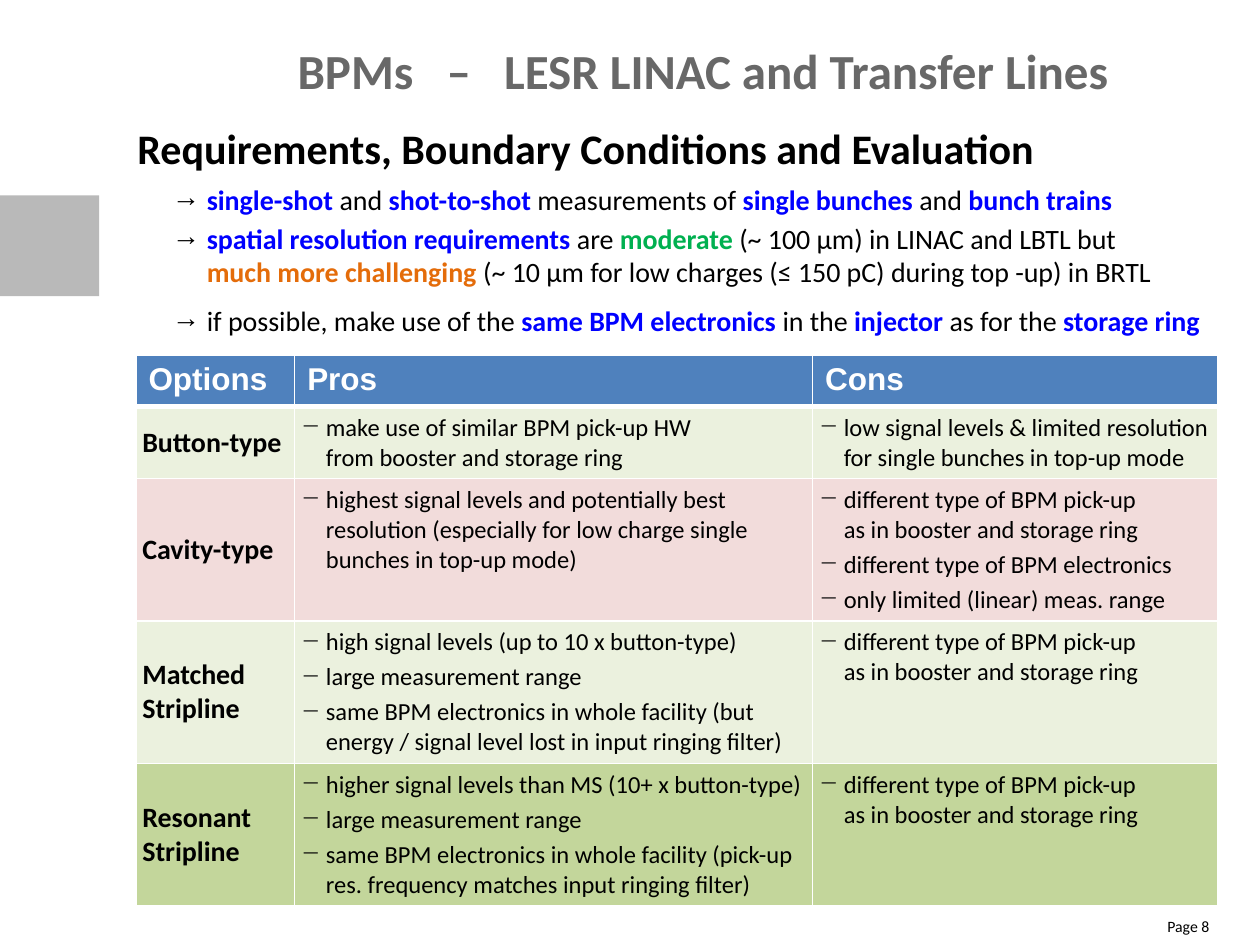
from pptx import Presentation
from pptx.dml.color import RGBColor
from pptx.enum.shapes import MSO_SHAPE as Shape
from pptx.enum.text import MSO_ANCHOR as Anchor, PP_ALIGN as Align
from pptx.oxml.ns import qn
from pptx.util import Cm, Pt
from lxml.etree import SubElement

BLACK, WHITE, GREY, LIGHT_GREY = "000000", "FFFFFF", "686868", "B9B9B9"
BLUE, GREEN, ORANGE = "0000FF", "00B050", "E46C0A"
HEADER, NEUTRAL, POOR, BEST = "4F81BD", "EBF1DE", "F2DCDB", "C3D69B"

TITLE = "BPMs   –   LESR LINAC and Transfer Lines"
HEADING = "Requirements, Boundary Conditions and Evaluation"
ARROW, CONTINUED = "\t→\t", "\t\t"

# lead, line spacing, space after, fragments; a coloured fragment is bold
REQUIREMENTS = [
    (ARROW, 1.3, 3, [("single-shot ", BLUE), ("and", BLACK), (" shot-to-shot ", BLUE),
                     ("measurements of ", BLACK), ("single bunches ", BLUE),
                     ("and ", BLACK), ("bunch trains", BLUE)]),
    (ARROW, 1, 0, [("spatial resolution requirements ", BLUE), ("are ", BLACK),
                   ("moderate ", GREEN), ("(~ 100 µm) in LINAC and LBTL but", BLACK)]),
    (CONTINUED, 1, 3, [("much more challenging", ORANGE),
                       (" (~ 10 µm for low charges (≤ 150 pC) during top -up) in BRTL", BLACK)]),
    (ARROW, 1.3, 6, [("if possible, make use of the ", BLACK), ("same BPM electronics ", BLUE),
                     ("in the ", BLACK), ("injector ", BLUE), ("as for the ", BLACK),
                     ("storage ring", BLUE)]),
]

COLUMNS = [("Options", 3.2), ("Pros", 10.44), ("Cons", 8.16)]
HEADER_HEIGHT = 1.04
OTHER_PICKUP = "different type of BPM pick-up\nas in booster and storage ring"
# option, pros, cons, fill, row height; a line break inside an item starts an indented line
OPTIONS = [
    ("Button-type",
     ["make use of similar BPM pick-up HW\nfrom booster and storage ring"],
     ["low signal levels & limited resolution\nfor single bunches in top-up mode"],
     NEUTRAL, 1.45),
    ("Cavity-type",
     ["highest signal levels and potentially best\n"
      "resolution (especially for low charge single bunches in top-up mode)"],
     [OTHER_PICKUP, "different type of BPM electronics", "only limited (linear) meas. range"],
     POOR, 2.87),
    ("Matched\nStripline",
     ["high signal levels (up to 10 x button-type)", "large measurement range",
      "same BPM electronics in whole facility (but energy / signal level lost in input ringing filter)"],
     [OTHER_PICKUP], NEUTRAL, 2.87),
    ("Resonant\nStripline",
     ["higher signal levels than MS (10+ x button-type)", "large measurement range",
      "same BPM electronics in whole facility (pick-up res. frequency matches input ringing filter)"],
     [OTHER_PICKUP], BEST, 2.87),
]


def rgb(color):
    return RGBColor.from_string(color)


def style(run, size, color=BLACK, bold=False, face="Calibri"):
    font = run.font
    font.size, font.bold, font.name = Pt(size), bold, face
    font.color.rgb = rgb(color)


def add_run(paragraph, text, *look, **more):
    run = paragraph.add_run()
    run.text = text
    style(run, *look, **more)


def add_box(slide, left, top, width, height):
    frame = slide.shapes.add_textbox(Cm(left), Cm(top), Cm(width), Cm(height)).text_frame
    frame.margin_left = frame.margin_right = frame.margin_top = frame.margin_bottom = 0
    frame.word_wrap = True
    return frame


def set_tabs(paragraph, *stops):
    tabs = SubElement(paragraph._p.get_or_add_pPr(), qn("a:tabLst"))
    for stop in stops:
        SubElement(tabs, qn("a:tab"), pos=str(Cm(stop)), algn="l")


def set_borders(cell, bottom=1):
    """Draw white cell borders; the fill has to be set afterwards."""
    for side, width in (("L", 1), ("R", 1), ("T", 1), ("B", bottom)):
        line = SubElement(cell._tc.get_or_add_tcPr(), qn("a:ln" + side), w=str(Pt(width)))
        SubElement(SubElement(line, qn("a:solidFill")), qn("a:srgbClr"), val=WHITE)


def fill_cell(cell, color, bottom=1):
    set_borders(cell, bottom)
    cell.fill.solid()
    cell.fill.fore_color.rgb = rgb(color)


def tighten(cell):
    cell.margin_left = cell.margin_right = cell.margin_top = cell.margin_bottom = Cm(0.13)


def write_items(cell, items):
    lines = [(n, part, line) for n, item in enumerate(items)
             for part, line in enumerate(item.split("\n"))]
    frame = cell.text_frame
    frame.text = "\n".join("\t" + line if part else line for _, part, line in lines)
    for i, (paragraph, (n, part, _)) in enumerate(zip(frame.paragraphs, lines)):
        props = paragraph._p.get_or_add_pPr()
        props.set("marL", str(Cm(0.5)))
        props.set("indent", str(-Cm(0.5)))
        if part:
            SubElement(props, qn("a:buNone"))
        else:
            SubElement(props, qn("a:buChar"), char="−")
        if i + 1 < len(lines) and lines[i + 1][0] != n:
            paragraph.space_after = Pt(3)
        style(paragraph.runs[0], 14)


def add_requirements(slide):
    frame = add_box(slide, 2.77, 2.36, 21.9, 4.57)
    heading = frame.paragraphs[0]
    heading.line_spacing = 1.1
    add_run(heading, HEADING, 24, bold=True)
    for lead, spacing, after, fragments in REQUIREMENTS:
        paragraph = frame.add_paragraph()
        set_tabs(paragraph, 0.7, 1.4)
        paragraph.line_spacing, paragraph.space_after = float(spacing), Pt(after)
        add_run(paragraph, lead, 16, bold=True, face="Arial Narrow")
        for text, color in fragments:
            add_run(paragraph, text, 16, color, color != BLACK)


def add_options(slide):
    heights = [HEADER_HEIGHT] + [option[-1] for option in OPTIONS]
    widths = [width for _, width in COLUMNS]
    table = slide.shapes.add_table(len(heights), len(widths), Cm(2.74), Cm(7.16),
                                   Cm(sum(widths)), Cm(sum(heights))).table
    for row, height in zip(table.rows, heights):
        row.height = Cm(height)
    for i, (label, width) in enumerate(COLUMNS):
        table.columns[i].width = Cm(width)
        cell = table.cell(0, i)
        cell.text_frame.text = label
        style(cell.text_frame.paragraphs[0].runs[0], 18, WHITE, True, "Arial")
        fill_cell(cell, HEADER, bottom=3)
    for r, (name, pros, cons, color, _) in enumerate(OPTIONS, 1):
        option, *arguments = table.rows[r].cells
        option.text_frame.text = name
        for paragraph in option.text_frame.paragraphs:
            style(paragraph.runs[0], 16, bold=True)
        option.vertical_anchor = Anchor.MIDDLE
        for cell, items in zip(arguments, (pros, cons)):
            write_items(cell, items)
        for cell in (option, *arguments):
            tighten(cell)
            fill_cell(cell, color)


def main():
    deck = Presentation()
    deck.slide_width, deck.slide_height = Cm(25.4), Cm(19.05)
    slide = deck.slides.add_slide(deck.slide_layouts[6])

    marker = slide.shapes.add_shape(Shape.RECTANGLE, 0, Cm(3.94), Cm(2), Cm(2.03))
    marker.shadow.inherit = False
    marker.fill.solid()
    marker.fill.fore_color.rgb = rgb(LIGHT_GREY)
    marker.line.fill.background()

    add_run(add_box(slide, 6, 0.81, 18, 1.42).paragraphs[0], TITLE, 28, GREY, True)
    page = add_box(slide, 22.78, 18.49, 1.6, 0.53).paragraphs[0]
    page.alignment = Align.RIGHT
    add_run(page, "Page 8", 9)

    add_requirements(slide)
    add_options(slide)
    deck.save("out.pptx")


if __name__ == "__main__":
    main()
